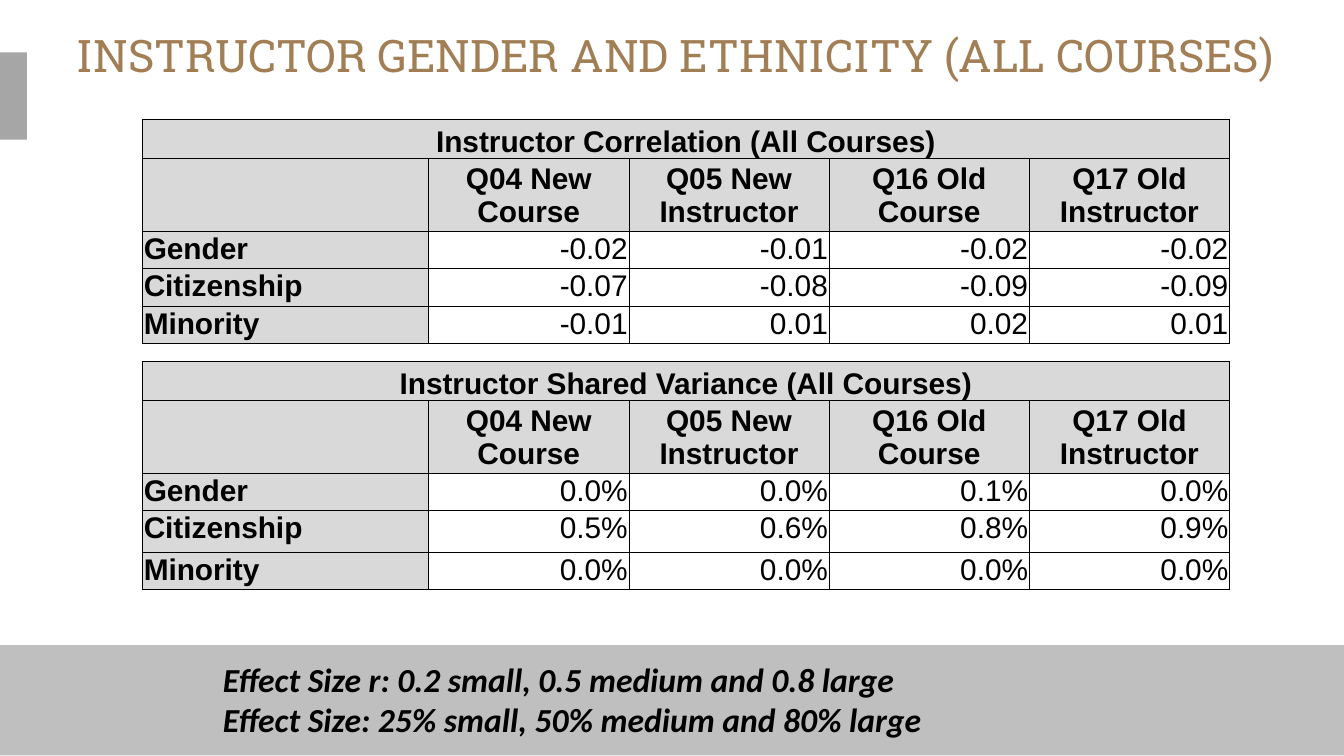
import pptx
import pptx.dml.color
import pptx.enum.shapes
import pptx.enum.text
import pptx.oxml
import pptx.oxml.ns
import pptx.util
from pptx.util import Inches

COLORS = {
    "title": "A27E55",
    "text": "000000",
    "border": "000000",
    "header": "D9D9D9",
    "body": "FFFFFF",
    "footer": "BFBFBF",
    "tab": "A6A6A6",
}
ALIGN = pptx.enum.text.PP_ALIGN
ANCHOR = pptx.enum.text.MSO_ANCHOR

TABLE_LEFT = 1.06
COLUMN_WIDTHS = [2.13] + [1.49] * 4
QUESTIONS = ["", "Q04 New Course", "Q05 New Instructor", "Q16 Old Course", "Q17 Old Instructor"]
CORRELATIONS = [
    ["Gender", "-0.02", "-0.01", "-0.02", "-0.02"],
    ["Citizenship", "-0.07", "-0.08", "-0.09", "-0.09"],
    ["Minority", "-0.01", "0.01", "0.02", "0.01"],
]
VARIANCES = [
    ["Gender", "0.0%", "0.0%", "0.1%", "0.0%"],
    ["Citizenship", "0.5%", "0.6%", "0.8%", "0.9%"],
    ["Minority", "0.0%", "0.0%", "0.0%", "0.0%"],
]


def color(name):
    return pptx.dml.color.RGBColor.from_string(COLORS[name])


def style_font(paragraph, name, size, color_name, bold=False, italic=False):
    font = paragraph.font
    font.name = name
    font.size = pptx.util.Pt(size)
    font.color.rgb = color(color_name)
    font.bold = bold
    font.italic = italic


def add_band(slide, left, top, width, height, color_name):
    shape = slide.shapes.add_shape(
        pptx.enum.shapes.MSO_SHAPE.RECTANGLE,
        Inches(left), Inches(top), Inches(width), Inches(height))
    shape.shadow.inherit = False
    shape.fill.solid()
    shape.fill.fore_color.rgb = color(color_name)
    shape.line.fill.background()


def add_text(slide, left, top, width, height, lines, wrap, margins=None, **font):
    box = slide.shapes.add_textbox(Inches(left), Inches(top), Inches(width), Inches(height))
    frame = box.text_frame
    frame.word_wrap = wrap
    if margins is not None:
        frame.margin_left = frame.margin_right = Inches(margins)
        frame.margin_top = frame.margin_bottom = Inches(margins)
    frame.text = "\n".join(lines)
    for paragraph in frame.paragraphs:
        style_font(paragraph, **font)


def add_borders(cell):
    properties = cell._tc.get_or_add_tcPr()
    namespace = pptx.oxml.ns.nsdecls("a")
    for side in ("lnL", "lnR", "lnT", "lnB"):
        properties.append(pptx.oxml.parse_xml(
            f'<a:{side} {namespace} w="6350"><a:solidFill>'
            f'<a:srgbClr val="{COLORS["border"]}"/></a:solidFill></a:{side}>'))


def style_cell(cell, text, row, column):
    is_header = row < 2 or column == 0
    add_borders(cell)
    cell.fill.solid()
    cell.fill.fore_color.rgb = color("header" if is_header else "body")
    cell.margin_left = cell.margin_right = cell.margin_top = Inches(0.01)
    cell.margin_bottom = 0
    cell.vertical_anchor = {0: ANCHOR.BOTTOM, 1: ANCHOR.MIDDLE}.get(row, ANCHOR.TOP)
    cell.text = text
    paragraph = cell.text_frame.paragraphs[0]
    if row < 2:
        paragraph.alignment = ALIGN.CENTER
    else:
        paragraph.alignment = ALIGN.LEFT if column == 0 else ALIGN.RIGHT
    style_font(paragraph, "Arial", 16, "text", bold=is_header)


def add_result_table(slide, top, height, row_heights, heading, results):
    rows = [[heading, "", "", "", ""], QUESTIONS] + results
    frame = slide.shapes.add_table(
        len(rows), len(COLUMN_WIDTHS), Inches(TABLE_LEFT), Inches(top),
        Inches(sum(COLUMN_WIDTHS)), Inches(height))
    table = frame.table
    for column, width in zip(table.columns, COLUMN_WIDTHS):
        column.width = Inches(width)
    for row, row_height in zip(table.rows, row_heights):
        row.height = Inches(row_height)
    # Rows grow with their text, so the frame is taller than their sum
    frame.height = Inches(height)
    for row_index, texts in enumerate(rows):
        for column_index, text in enumerate(texts):
            style_cell(table.cell(row_index, column_index), text, row_index, column_index)
    table.cell(0, 0).merge(table.cell(0, len(COLUMN_WIDTHS) - 1))


def main():
    presentation = pptx.Presentation()
    presentation.slide_width = Inches(10)
    presentation.slide_height = Inches(10) * 9 // 16
    slide = presentation.slides.add_slide(presentation.slide_layouts[6])

    # Footer band and side tab
    add_band(slide, 0, 4.8, 10, 0.82, "footer")
    add_band(slide, -0.03, 0.39, 0.23, 0.65, "tab")

    # Title
    add_text(slide, 0.57, 0.21, 9, 0.63,
             ["INSTRUCTOR GENDER AND ETHNICITY (ALL COURSES)"], wrap=True, margins=0,
             name="Roboto Slab", size=24, color_name="title")

    # Correlation table
    add_result_table(slide, 0.89, 1.65, [0.29, 0.26, 0.16, 0.16, 0.16],
                     "Instructor Correlation (All Courses)", CORRELATIONS)

    # Effect size guide
    add_text(slide, 1.56, 4.85, 5.47, 0.71,
             ["Effect Size r: 0.2 small, 0.5 medium and 0.8 large",
              "Effect Size: 25% small, 50% medium and 80% large"], wrap=False,
             name="Calibri", size=18, color_name="text", bold=True, italic=True)

    # Shared variance table
    add_result_table(slide, 2.69, 1.69, [0.29, 0.26, 0.16, 0.31, 0.16],
                     "Instructor Shared Variance (All Courses)", VARIANCES)

    presentation.save("out.pptx")


if __name__ == "__main__":
    main()
